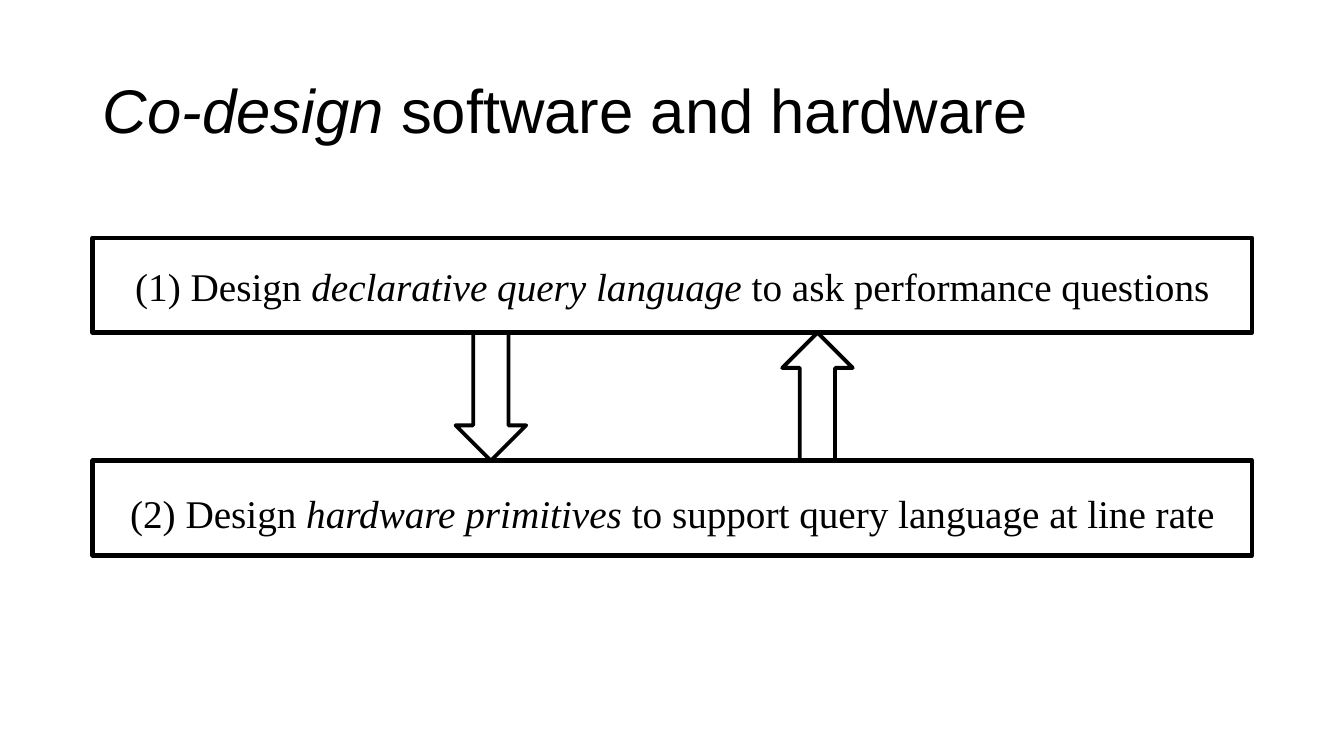
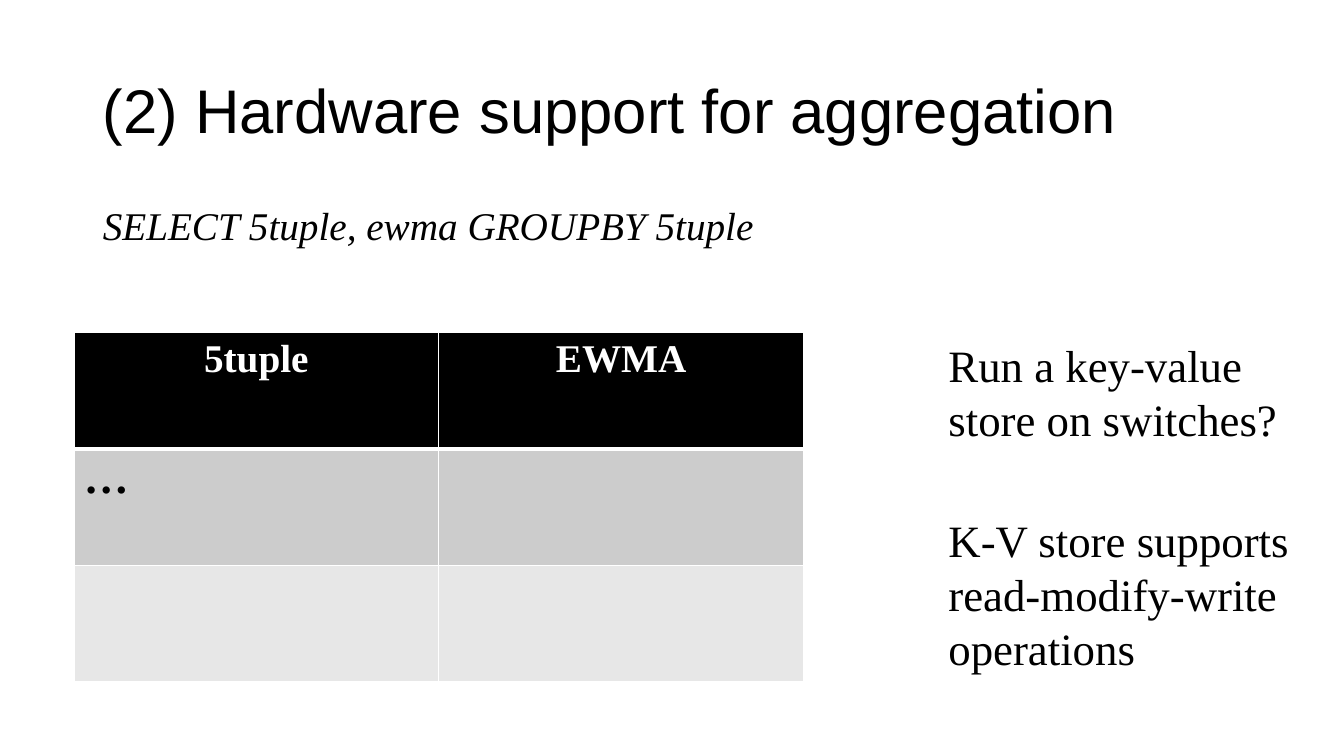
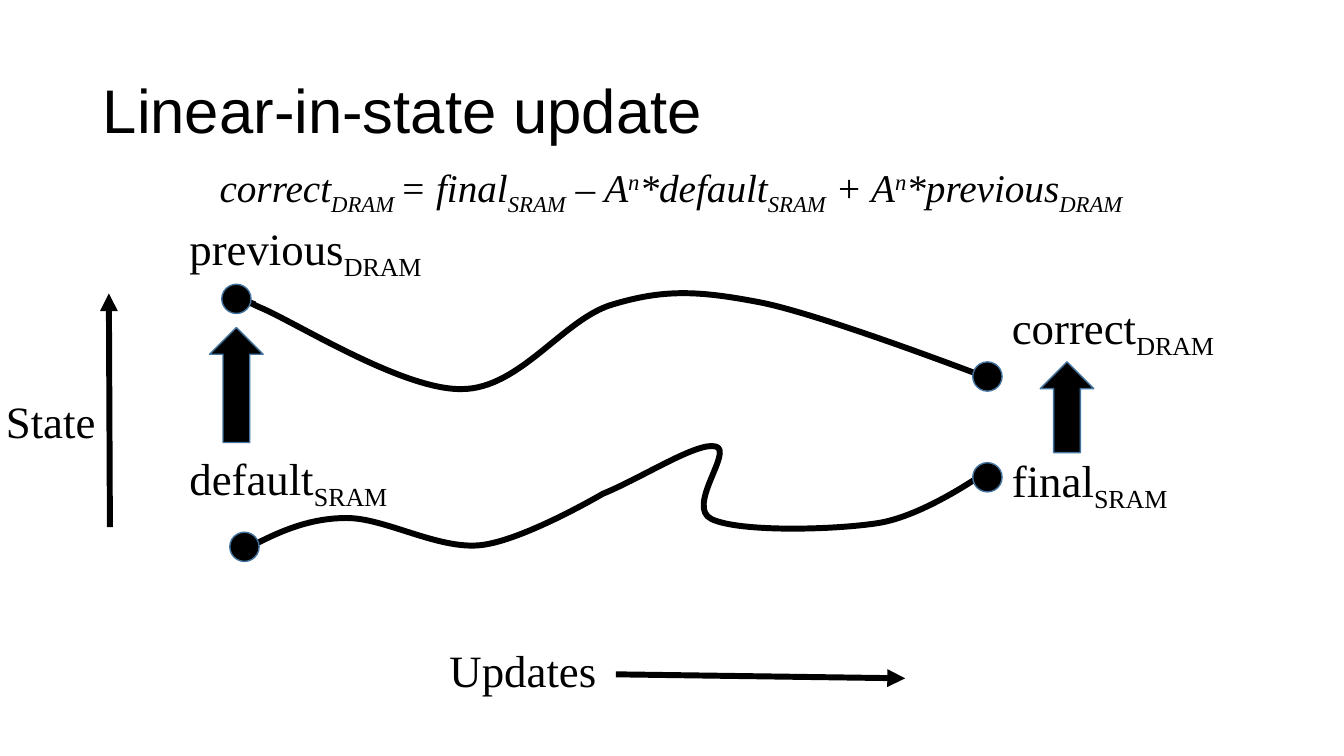
from lxml import etree
from pptx import Presentation
from pptx.dml.color import RGBColor
from pptx.enum.shapes import MSO_CONNECTOR as CONN, MSO_SHAPE as SHAPE
from pptx.enum.text import MSO_ANCHOR as ANCHOR, MSO_AUTO_SIZE as FIT, PP_ALIGN as ALIGN
from pptx.oxml.ns import qn
from pptx.util import Inches, Pt

BLACK = RGBColor(0x00, 0x00, 0x00)
WHITE = RGBColor(0xFF, 0xFF, 0xFF)
DARK_BAND = RGBColor(0xCC, 0xCC, 0xCC)
LIGHT_BAND = RGBColor(0xE7, 0xE7, 0xE7)
OUTLINE = RGBColor(0x43, 0x73, 0x9E)

WIDTH, HEIGHT = Inches(13.33), Inches(7.5)
TITLE_FONT, TEXT_FONT = "Arial", "Times New Roman"
TITLE_LAYOUT, BODY_LAYOUT = 5, 1

MARGIN, CONTENT_W = 6.9, 86.25
TITLE_BOX = (MARGIN, 5.33, CONTENT_W, 19.33)
BODY_BOX = (MARGIN, 26.67, CONTENT_W, 63.47)
LABEL_W, LABEL_H = 22.13, 8.53
DOT_W, DOT_H = 2.18, 3.87

ITALIC = {"italic": True}
SUB = {"base": -25}
FORMULA_SUB = {"base": -25, "italic": True}
FORMULA_SUP = {"base": 30, "italic": True}

UPPER_CURVE = [
    (18.98, 40.27),
    (17.85, 39.47), (19.35, 40.67), (19.35, 40.67),
    (21.9, 42.53), (29.93, 51.6), (34.35, 51.47),
    (38.7, 51.47), (41.93, 42.13), (45.6, 40.27),
    (49.35, 38.27), (51.9, 38.4), (56.55, 40),
    (61.2, 41.6), (73.5, 50), (73.5, 50),
]
LOWER_CURVE = [
    (18.53, 72.4),
    (20.7, 70.4), (22.95, 68.53), (25.8, 68.53),
    (28.65, 68.53), (32.55, 72.67), (35.7, 72.13),
    (38.85, 71.6), (44.85, 65.33), (44.85, 65.33),
    (47.78, 63.2), (51.9, 58.4), (53.25, 59.07),
    (54.6, 59.6), (51, 67.07), (52.95, 68.67),
    (54.98, 70.4), (61.95, 70.13), (65.33, 69.2),
    (68.7, 68.27), (73.05, 62.8), (73.05, 62.8),
]


def at(x, y, *size):
    """Turn percentages of the slide into lengths, alternating across and down."""
    shares = (x, y) + size
    return [round(v * (HEIGHT if i % 2 else WIDTH) / 100) for i, v in enumerate(shares)]


def write(p, *runs, size=32, font=TEXT_FONT, color=BLACK, bold=False, align=None, spacing=None):
    """Fill a paragraph with runs, each a string or a (string, format) pair."""
    p.alignment = align
    p.line_spacing = spacing
    for run in runs:
        text, style = (run, {}) if isinstance(run, str) else run
        r = p.add_run()
        r.text = text
        r.font.size, r.font.name, r.font.bold = Pt(size), font, bold
        r.font.color.rgb = color
        r.font.italic = style.get("italic", False)
        if "base" in style:
            r.font._element.set("baseline", str(style["base"] * 1000))


def move(sp, box):
    """Move a placeholder to a box given in percentages."""
    sp.left, sp.top, sp.width, sp.height = at(*box)
    sp.text_frame.auto_size = FIT.NONE


def add_slide(prs, layout, *title):
    """Add a slide with the shared title style."""
    s = prs.slides.add_slide(prs.slide_layouts[layout])
    move(s.shapes.title, TITLE_BOX)
    tf = s.shapes.title.text_frame
    tf.vertical_anchor = ANCHOR.MIDDLE
    write(tf.paragraphs[0], *title, size=44, font=TITLE_FONT, align=ALIGN.LEFT, spacing=0.9)
    return s


def fill_body(s, *paragraphs, align=ALIGN.LEFT, gap=10):
    """Write unbulleted paragraphs into the body placeholder."""
    body = s.placeholders[1]
    move(body, BODY_BOX)
    tf = body.text_frame
    for i, runs in enumerate(paragraphs):
        p = tf.add_paragraph() if i else tf.paragraphs[0]
        write(p, *runs, size=28, align=align, spacing=0.9)
        p.space_before = Pt(gap if i else 0)
        pPr = p._p.get_or_add_pPr()
        pPr.set("marL", "0")
        pPr.set("indent", "0")
        etree.SubElement(pPr, qn("a:buNone"))
    return tf


def add_text(s, box, *paragraphs, size=32):
    """Add a wrapping text box."""
    tf = s.shapes.add_textbox(*at(*box)).text_frame
    tf.word_wrap = True
    for i, runs in enumerate(paragraphs):
        write(tf.add_paragraph() if i else tf.paragraphs[0], *runs, size=size)


def style_shape(sp, line, weight, fill=None):
    """Give a shape its outline and fill, without shadow."""
    sp.shadow.inherit = False
    sp.line.color.rgb, sp.line.width = line, Pt(weight)
    if fill is None:
        sp.fill.background()
    else:
        sp.fill.solid()
        sp.fill.fore_color.rgb = fill


def add_shape(s, kind, box, line=OUTLINE, weight=1, fill=None):
    """Add a preset shape."""
    style_shape(s.shapes.add_shape(kind, *at(*box)), line, weight, fill)


def add_curve(s, points):
    """Add an open curve: a start point, then three points for each Bezier piece."""
    start, *rest = [at(*point) for point in points]
    builder = s.shapes.build_freeform(*start)
    builder.add_line_segments(rest, close=False)
    sp = builder.convert_to_shape()
    style_shape(sp, BLACK, 4.25)
    lines = list(sp._element.iter(qn("a:lnTo")))
    for i in range(0, len(lines), 3):
        piece = etree.Element(qn("a:cubicBezTo"))
        lines[i].addprevious(piece)
        for line in lines[i:i + 3]:
            piece.append(line[0])
            line.getparent().remove(line)


def add_arrow(s, start, end):
    """Add a straight line with an arrowhead at its end."""
    c = s.shapes.add_connector(CONN.STRAIGHT, *at(*start), *at(*end))
    c.line.color.rgb, c.line.width = BLACK, Pt(4.25)
    etree.SubElement(c.line._get_or_add_ln(), qn("a:tailEnd"), type="triangle")
    etree.SubElement(c._element.spPr, qn("a:effectLst"))


def set_borders(cell, **weights):
    """Draw white cell borders; keys are the sides L, R, T and B."""
    tcPr = cell._tc.get_or_add_tcPr()
    for i, (side, weight) in enumerate(weights.items()):
        ln = etree.Element(qn(f"a:ln{side}"), w=str(Pt(weight)))
        fill = etree.SubElement(ln, qn("a:solidFill"))
        etree.SubElement(fill, qn("a:srgbClr"), val=str(WHITE))
        tcPr.insert(i, ln)


def add_table(s, box, rows, fills):
    """Add a table whose first row is a header."""
    table = s.shapes.add_table(len(rows), len(rows[0]), *at(*box)).table
    for i, (row, fill) in enumerate(zip(rows, fills)):
        for j, text in enumerate(row):
            cell = table.cell(i, j)
            cell.fill.solid()
            cell.fill.fore_color.rgb = fill
            set_borders(cell, L=1, R=1, T=3 if i == 1 else 1, B=1 if i else 3)
            if text:
                style = ({"size": 32, "bold": True} if i else
                         {"size": 28, "bold": True, "color": WHITE, "align": ALIGN.CENTER})
                write(cell.text_frame.paragraphs[0], text, **style)


def codesign_slide(prs):
    """Two design steps that feed each other."""
    s = add_slide(prs, BODY_LAYOUT, ("Co-design ", ITALIC), "software and hardware")
    tf = fill_body(
        s,
        ["(1) Design ", ("declarative query language ", ITALIC), "to ask performance questions"],
        ["(2) Design", (" hardware primitives", ITALIC), " to support query language at line rate"],
        align=ALIGN.CENTER, gap=132)
    tf.margin_top = Inches(0.65)
    step_tops, step_h = (31.47, 60.93), 12.53
    for top in step_tops:
        add_shape(s, SHAPE.RECTANGLE, (MARGIN, top, CONTENT_W, step_h), BLACK, 3.25)
    gap_top = step_tops[0] + step_h
    for kind, left in ((SHAPE.DOWN_ARROW, 33.9), (SHAPE.UP_ARROW, 58.2)):
        add_shape(s, kind, (left, gap_top, 5.25, step_tops[1] - gap_top), BLACK, 2.75)


def aggregation_slide(prs):
    """A query, its result table and two remarks."""
    s = add_slide(prs, BODY_LAYOUT, "(2) Hardware support for aggregation")
    fill_body(s, [("SELECT 5tuple, ewma GROUPBY 5tuple", ITALIC)])
    add_table(s, (5.5, 44, 54.3, 46.13),
              [("5tuple", "EWMA"), ("…", ""), ("", "")],
              [BLACK, DARK_BAND, LIGHT_BAND])
    add_text(s, (69.83, 44, 26.55, 15.73), ["Run a key-value store on switches?"])
    add_text(s, (69.83, 67.2, 28.2, 22.93),
             ["K-V store supports"], ["read-modify-write operations"])


def update_slide(prs):
    """State curves in both memories and the formula that merges them."""
    s = add_slide(prs, TITLE_LAYOUT, "Linear-in-state update")
    add_curve(s, UPPER_CURVE)
    add_curve(s, LOWER_CURVE)
    add_arrow(s, (45.83, 89.2), (67.35, 89.73))
    add_arrow(s, (8.18, 69.73), (8.1, 38.8))
    for x, y in ((16.5, 37.6), (17.1, 70.4), (72.38, 61.2), (72.38, 47.87)):
        add_shape(s, SHAPE.OVAL, (x, y, DOT_W, DOT_H), fill=BLACK)
    for x, y, h in ((15.6, 43.33, 15.2), (77.4, 47.87, 12)):
        add_shape(s, SHAPE.UP_ARROW, (x, y, 3.98, h), fill=BLACK)
    labels = [
        (32.7, 84.4, ["Updates"]),
        (-0.3, 51.47, ["State"]),
        (13.35, 28.53, ["previous", ("DRAM", SUB)]),
        (13.35, 58.93, ["default", ("SRAM", SUB)]),
        (74.55, 59.2, ["final", ("SRAM", SUB)]),
        (74.55, 38.93, ["correct", ("DRAM", SUB)]),
    ]
    for x, y, runs in labels:
        add_text(s, (x, y, LABEL_W, LABEL_H), runs)
    add_text(s, (15.6, 20.93, 78.98, 7.6), [
        ("correct", ITALIC), ("DRAM ", FORMULA_SUB),
        ("= final", ITALIC), ("SRAM", FORMULA_SUB),
        (" – A", ITALIC), ("n", FORMULA_SUP),
        ("*default", ITALIC), ("SRAM", FORMULA_SUB),
        (" + A", ITALIC), ("n", FORMULA_SUP),
        ("*previous", ITALIC), ("DRAM", FORMULA_SUB),
    ], size=28)


def main():
    """Build and save the presentation."""
    prs = Presentation()
    prs.slide_width, prs.slide_height = WIDTH, HEIGHT
    codesign_slide(prs)
    aggregation_slide(prs)
    update_slide(prs)
    prs.save("out.pptx")


if __name__ == "__main__":
    main()
